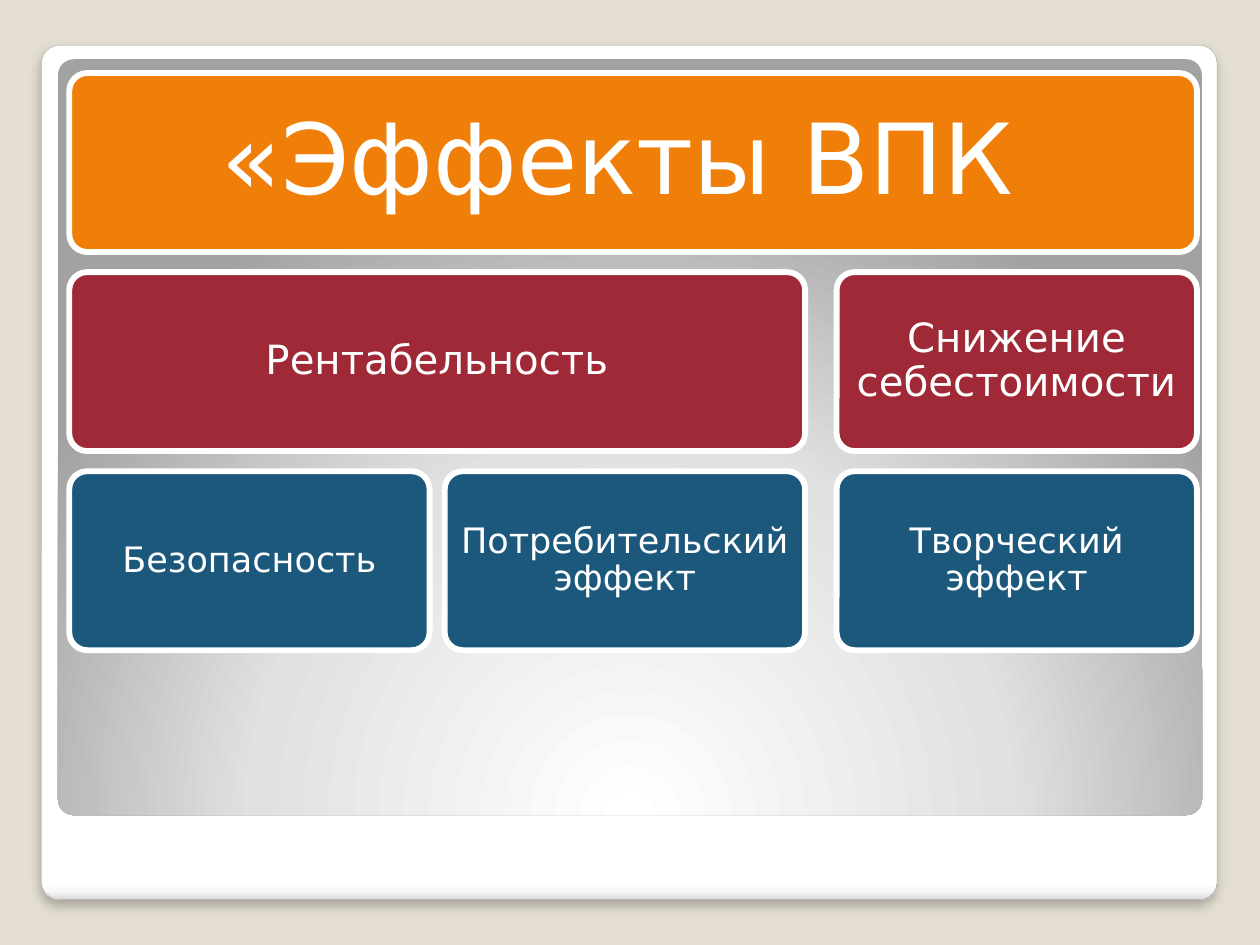
from lxml.etree import SubElement
from pptx import Presentation
from pptx.dml.color import RGBColor
from pptx.enum.shapes import MSO_SHAPE
from pptx.enum.text import MSO_ANCHOR, PP_ALIGN
from pptx.oxml import parse_xml
from pptx.oxml.ns import nsdecls, qn
from pptx.util import Inches, Pt

SAND = RGBColor(0xE3, 0xDE, 0xD1)
WHITE = RGBColor(0xFF, 0xFF, 0xFF)
GREY = RGBColor(0xA4, 0xA4, 0xA4)
ORANGE = RGBColor(0xF0, 0x7F, 0x09)
RED = RGBColor(0x9F, 0x29, 0x36)
BLUE = RGBColor(0x1B, 0x58, 0x7C)

DOWN = '<a:lin ang="5400000" scaled="0"/>'
ROUND = ('<a:path path="circle"><a:fillToRect l="50000" t="175000" '
         'r="50000" b="-75000"/></a:path>')


class Deck:
    font = "DejaVu Sans"
    edge = 3.35

    def __init__(self, prs):
        self.slide = prs.slides.add_slide(prs.slide_layouts[5])
        self.shapes = self.slide.shapes
        back = self.slide.background.fill
        back.solid()
        back.fore_color.rgb = SAND

    def box(self, left, top, width, height, bend):
        shape = self.shapes.add_shape(
            MSO_SHAPE.ROUNDED_RECTANGLE, Inches(left), Inches(top),
            Inches(width), Inches(height))
        shape.adjustments[0] = bend
        shape.shadow.inherit = False
        return shape

    def panel(self, left, top, width, height, stops, path):
        """Rounded frame with a gradient fill."""
        shape = self.box(left, top, width, height, 0.021)
        shape.line.fill.background()
        marks = "".join(
            f'<a:gs pos="{pos * 1000}"><a:srgbClr val="{tone}"/></a:gs>'
            for pos, tone in stops)
        fill = parse_xml(f'<a:gradFill {nsdecls("a")} rotWithShape="1">'
                         f'<a:gsLst>{marks}</a:gsLst>{path}</a:gradFill>')
        shape._element.spPr.find(qn("a:prstGeom")).addnext(fill)
        return shape

    def shade(self, shape):
        """Soft shadow below the shape."""
        list_ = shape._element.spPr.find(qn("a:effectLst"))
        cast = SubElement(list_, qn("a:outerShdw"), blurRad=str(Pt(6)),
                          dist=str(Pt(4)), dir="5400000", algn="t",
                          rotWithShape="0")
        tone = SubElement(cast, qn("a:srgbClr"), val="000000")
        SubElement(tone, qn("a:alpha"), val="25000")

    def text(self, shape, words, size, inset):
        frame = shape.text_frame
        frame.word_wrap = True
        frame.vertical_anchor = MSO_ANCHOR.MIDDLE
        frame.margin_left = frame.margin_right = Inches(inset)
        frame.margin_top = frame.margin_bottom = Inches(inset)
        para = frame.paragraphs[0]
        para.alignment = PP_ALIGN.CENTER
        para.line_spacing = 0.9
        run = para.add_run()
        run.text = words
        run.font.name = self.font
        run.font.size = Pt(size)
        run.font.color.rgb = WHITE

    def card(self, left, top, width, height, fill):
        shape = self.box(left, top, width, height, 0.1)
        shape.fill.solid()
        shape.fill.fore_color.rgb = fill
        shape.line.color.rgb = WHITE
        shape.line.width = Pt(self.edge)
        return shape

    def title(self, words, left, top, width, height, size, inset):
        """Title placeholder, raised above the cards."""
        title = self.shapes.title
        title.left, title.top = Inches(left), Inches(top)
        title.width, title.height = Inches(width), Inches(height)
        self.text(title, words, size, inset)
        self.shapes._spTree.append(title._element)


def main():
    prs = Presentation()
    prs.slide_width, prs.slide_height = Inches(10), Inches(7.5)
    deck = Deck(prs)

    # Frame and inner panel
    frame = deck.panel(
        0.33, 0.36, 9.33, 6.78,
        [(0, "FFFFFF"), (98, "FFFFFF"), (99, "F7F7F7"), (100, "DADADA")], DOWN)
    frame.line.color.rgb = GREY
    frame.line.width = Pt(0.16)
    deck.shade(frame)
    deck.panel(0.46, 0.47, 9.08, 6,
               [(0, "FFFFFF"), (55, "E1E1E1"), (100, "A2A2A2")], ROUND)

    # Grid: three columns, three rows
    cols = [0.55, 3.53, 6.64]
    wide, high = 2.86, 1.42
    rows = [0.58 + 1.58 * i for i in range(3)]

    def span(first, last):
        return cols[last] + wide - cols[first]

    # Top card with the title
    place = cols[0], rows[0], span(0, 2), high
    deck.card(*place, ORANGE)
    deck.title("«Эффекты ВПК ", *place, 56, 0.27)

    # Lower cards: words, row, first and last column, fill, size, inset
    cards = [
        ("Рентабельность", 1, 0, 1, RED, 23, 0.09),
        ("Снижение себестоимости", 1, 2, 2, RED, 23, 0.09),
        ("Безопасность", 2, 0, 0, BLUE, 20, 0.07),
        ("Потребительский эффект", 2, 1, 1, BLUE, 20, 0.07),
        ("Творческий эффект", 2, 2, 2, BLUE, 20, 0.07),
    ]
    for words, row, first, last, fill, size, inset in cards:
        card = deck.card(cols[first], rows[row], span(first, last), high, fill)
        deck.text(card, words, size, inset)

    prs.save("out.pptx")


if __name__ == "__main__":
    main()
